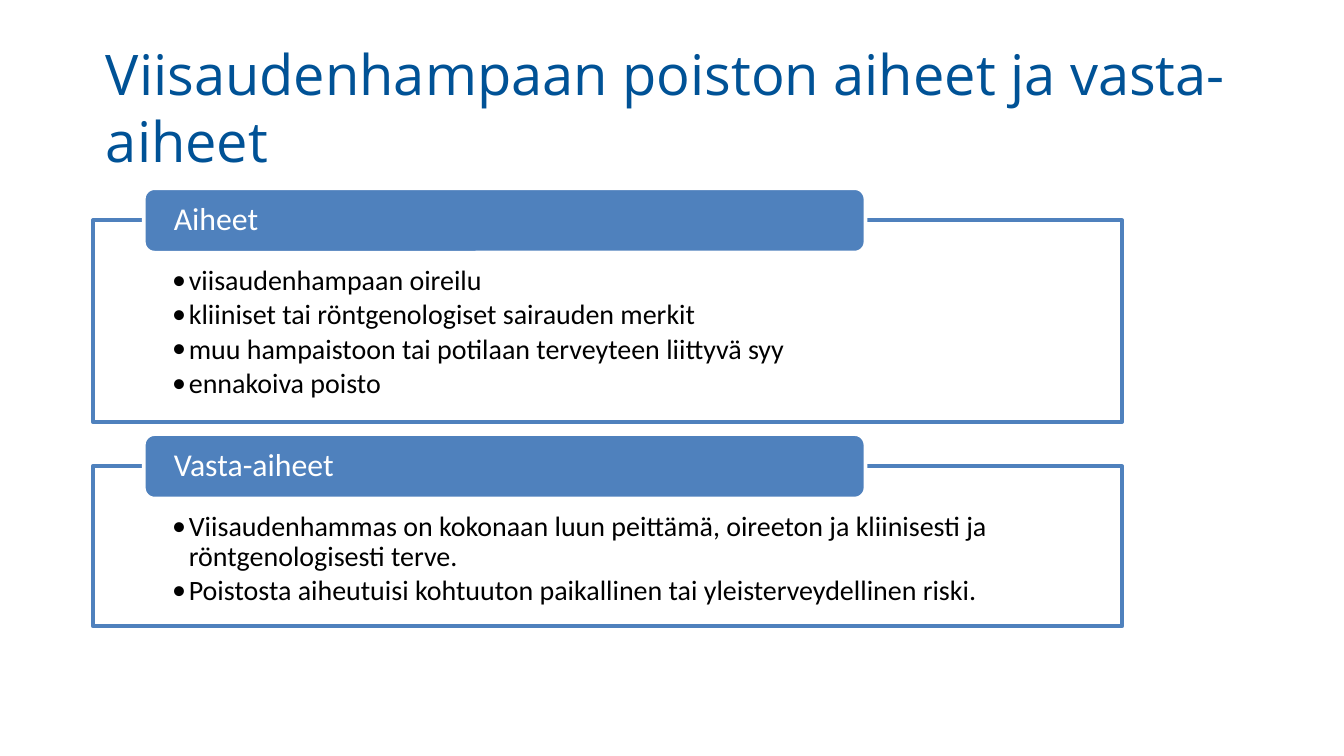
from lxml.etree import SubElement
from pptx import Presentation
from pptx.dml.color import RGBColor
from pptx.enum.shapes import MSO_SHAPE as Shape
from pptx.enum.text import MSO_ANCHOR as Anchor, PP_ALIGN as Align
from pptx.oxml.ns import qn
from pptx.util import Inches, Pt

NAVY = RGBColor(0x00, 0x52, 0x96)
BLUE = RGBColor(0x4F, 0x81, 0xBD)
WHITE = RGBColor(0xFF, 0xFF, 0xFF)
BLACK = RGBColor(0x00, 0x00, 0x00)

WIDTH = 10
HEIGHT = WIDTH * 9 / 16
MARGIN = 0.69
FRAME_WIDTH = 7.66
TAB_LEFT, TAB_WIDTH, TAB_HEIGHT = 1.07, 5.37, 0.48
FIRST_TOP, GAP = 1.4, 0.09
INDENT = Pt(9)

SECTIONS = [
    ("Aiheet", 1.5, [
        "viisaudenhampaan oireilu",
        "kliiniset tai röntgenologiset sairauden merkit",
        "muu hampaistoon tai potilaan terveyteen liittyvä syy",
        "ennakoiva poisto",
    ]),
    ("Vasta-aiheet", 1.19, [
        "Viisaudenhammas on kokonaan luun peittämä, oireeton ja kliinisesti ja "
        "röntgenologisesti terve.",
        "Poistosta aiheutuisi kohtuuton paikallinen tai yleisterveydellinen riski.",
    ]),
]


def set_frame(box, anchor, left, top, right, bottom):
    frame = box.text_frame
    frame.word_wrap = True
    frame.vertical_anchor = anchor
    frame.margin_left, frame.margin_top = Inches(left), Inches(top)
    frame.margin_right, frame.margin_bottom = Inches(right), Inches(bottom)
    return frame


def write(para, text, font, size, color, spacing=0.9):
    para.alignment = Align.LEFT
    para.line_spacing = spacing
    para.font.name = font
    para.font.size = Pt(size)
    span = para.add_run()
    span.text = text
    span.font.name = font
    span.font.size = Pt(size)
    span.font.color.rgb = color


def add_bullet(para):
    para.level = 1
    props = para._p.get_or_add_pPr()
    props.set("marL", str(INDENT))
    props.set("indent", str(-INDENT))
    SubElement(props, qn("a:buFont")).set("typeface", "Calibri")
    SubElement(props, qn("a:buChar")).set("char", "•")


def add_panel(page, kind, left, top, width, height, fill, line):
    panel = page.shapes.add_shape(
        kind, Inches(left), Inches(top), Inches(width), Inches(height))
    panel.shadow.inherit = False
    panel.fill.solid()
    panel.fill.fore_color.rgb = fill
    panel.line.color.rgb = line
    panel.line.width = Pt(2)
    return panel


def add_title(page, text):
    box = page.shapes.add_textbox(
        Inches(MARGIN), Inches(0.24), Inches(WIDTH - 2 * MARGIN), Inches(1.11))
    frame = set_frame(box, Anchor.MIDDLE, 0.1, 0.05, 0.1, 0.05)
    write(frame.paragraphs[0], text, "Open Sans", 30, NAVY, 1.0)


def add_section(page, top, heading, height, items):
    body = add_panel(page, Shape.RECTANGLE, MARGIN, top + TAB_HEIGHT / 2,
                     FRAME_WIDTH, height, WHITE, BLUE)
    frame = set_frame(body, Anchor.TOP, 0.59, 0.34, 0.59, 0.12)
    for index, item in enumerate(items):
        para = frame.add_paragraph() if index else frame.paragraphs[0]
        add_bullet(para)
        write(para, item, "Calibri", 15, BLACK)
        para.space_after = Pt(2.25)
    tab = add_panel(page, Shape.ROUNDED_RECTANGLE, TAB_LEFT, top,
                    TAB_WIDTH, TAB_HEIGHT, BLUE, WHITE)
    frame = set_frame(tab, Anchor.MIDDLE, 0.2, 0, 0.2, 0)
    write(frame.paragraphs[0], heading, "Calibri", 17, WHITE)


def main():
    deck = Presentation()
    deck.slide_width, deck.slide_height = Inches(WIDTH), Inches(HEIGHT)
    page = deck.slides.add_slide(deck.slide_layouts[6])
    add_title(page, "Viisaudenhampaan poiston aiheet ja vasta-aiheet")
    top = FIRST_TOP
    for heading, height, items in SECTIONS:
        add_section(page, top, heading, height, items)
        top += TAB_HEIGHT / 2 + height + GAP
    deck.save("out.pptx")


if __name__ == "__main__":
    main()
